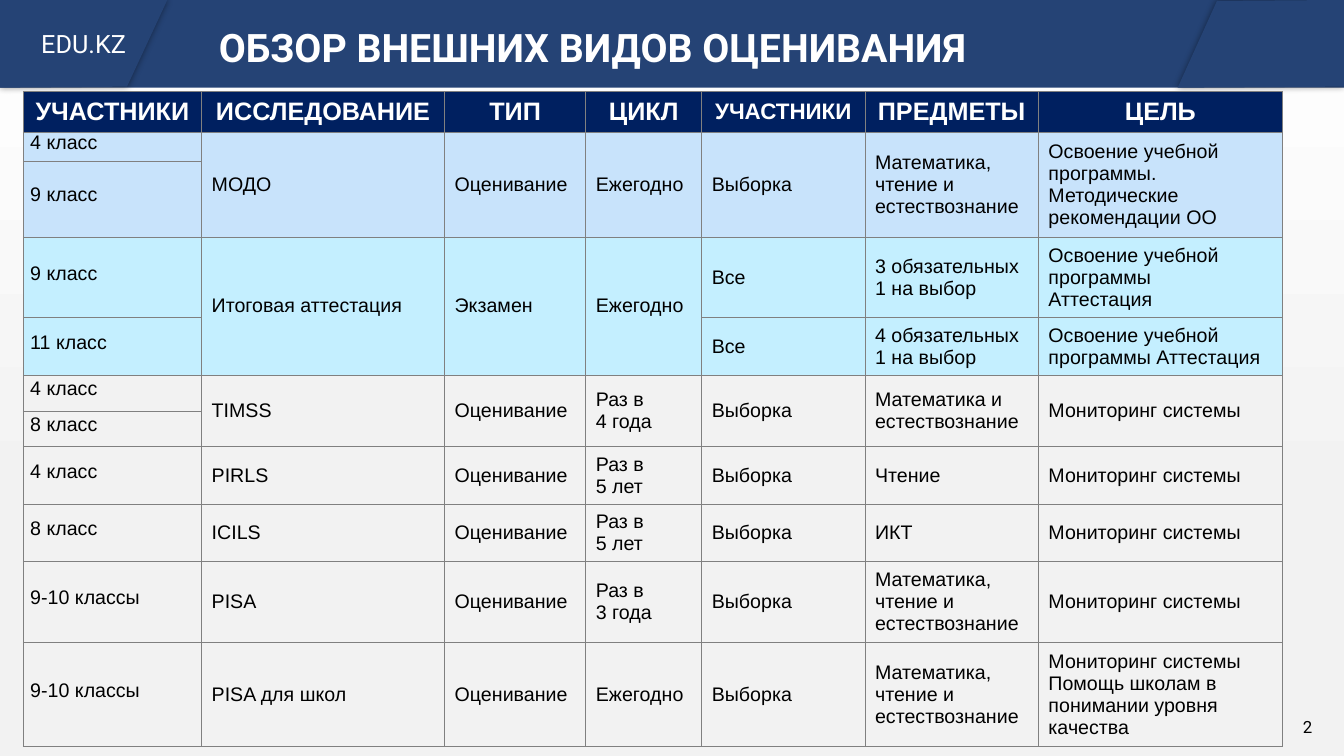
from lxml.etree import SubElement
from pptx import Presentation
from pptx.dml.color import RGBColor
from pptx.enum.shapes import MSO_SHAPE
from pptx.enum.text import MSO_ANCHOR, MSO_AUTO_SIZE, PP_ALIGN
from pptx.oxml import parse_xml
from pptx.oxml.ns import nsdecls, qn
from pptx.util import Inches, Pt

# Content
TITLE = "ОБЗОР ВНЕШНИХ ВИДОВ ОЦЕНИВАНИЯ"
SITE = "EDU.KZ"
PAGE = "2"
HEADS = ["УЧАСТНИКИ", "ИССЛЕДОВАНИЕ", "ТИП", "ЦИКЛ", "УЧАСТНИКИ", "ПРЕДМЕТЫ", "ЦЕЛЬ"]
TEST, YEARLY, SAMPLE = "Оценивание", "Ежегодно", "Выборка"
TRIO = "Математика, чтение и естествознание"
WATCH = "Мониторинг системы"
UP = None  # cell joined to the one above

BLUE, CYAN, GRAY = "C8E3FB", "C4EFFF", "F2F2F2"
NAVY, BAND, WHITE, BLACK, RULE = "002060", "254375", "FFFFFF", "000000", "808080"

# Row height, fill, cells
ROWS = [
    (0.39, NAVY, HEADS),
    (0.29, BLUE, ["4 класс", "МОДО", TEST, YEARLY, SAMPLE, TRIO,
                  "Освоение учебной программы. Методические рекомендации ОО"]),
    (0.75, BLUE, ["9 класс"] + [UP] * 6),
    (0.8, CYAN, ["9 класс", "Итоговая аттестация", "Экзамен", YEARLY, "Все",
                 "3 обязательных\n1 на выбор", "Освоение учебной программы\nАттестация"]),
    (0.57, CYAN, ["11 класс", UP, UP, UP, "Все",
                  "4 обязательных\n1 на выбор", "Освоение учебной программы Аттестация"]),
    (0.36, GRAY, ["4 класс", "TIMSS", TEST, "Раз в\n4 года", SAMPLE,
                  "Математика и\nестествознание", WATCH]),
    (0.35, GRAY, ["8 класс"] + [UP] * 6),
    (0.57, GRAY, ["4 класс", "PIRLS", TEST, "Раз в\n5 лет", SAMPLE, "Чтение", WATCH]),
    (0.57, GRAY, ["8 класс", "ICILS", TEST, "Раз в\n5 лет", SAMPLE, "ИКТ", WATCH]),
    (0.8, GRAY, ["9-10 классы", "PISA", TEST, "Раз в\n3 года", SAMPLE, TRIO, WATCH]),
    (1.03, GRAY, ["9-10 классы", "PISA для школ", TEST, YEARLY, SAMPLE, TRIO,
                  WATCH + "\nПомощь школам в понимании уровня качества"]),
]
COLS = [1.77, 2.41, 1.4, 1.15, 1.62, 1.72, 2.42]
LEFT = [(0, 0), (0, 0.87), (1.26, 0.86), (1.66, 0)]
RIGHT = [(13.33, 0.86), (13.33, 0), (12.07, 0.01), (11.68, 0.87)]


def color(code):
    return RGBColor.from_string(code)


def write(frame, text, size=14, font="Arial", ink=BLACK, bold=False,
          align=PP_ALIGN.LEFT, line=None, before=None, after=None):
    frame.text = text
    frame.word_wrap = True
    for para in frame.paragraphs:
        para.alignment = align
        para.line_spacing = line
        para.space_before = before
        para.space_after = after
        for run in para.runs:
            run.font.size = Pt(size)
            run.font.name = font
            run.font.bold = bold
            run.font.color.rgb = color(ink)


def paint(shape, code):
    shape.shadow.inherit = False
    shape.fill.solid()
    shape.fill.fore_color.rgb = color(code)
    shape.line.fill.background()


def corner(shapes, points):
    spots = [(Inches(x), Inches(y)) for x, y in points]
    form = shapes.build_freeform(*spots[0], scale=1.0)
    form.add_line_segments(spots[1:], close=True)
    shape = form.convert_to_shape()
    paint(shape, BAND)
    glow = shape.element.spPr.find(qn("a:effectLst"))
    shade = SubElement(glow, qn("a:outerShdw"), blurRad=str(Pt(5)), dist="0", dir="0")
    tone = SubElement(shade, qn("a:srgbClr"), val=BLACK)
    SubElement(tone, qn("a:alpha"), val="40000")
    return shape


def border(cell):
    props = cell._tc.get_or_add_tcPr()
    for spot, side in enumerate(("lnL", "lnR", "lnT", "lnB")):
        props.insert(spot, parse_xml(
            f'<a:{side} {nsdecls("a")} w="{Pt(0.5)}"><a:solidFill>'
            f'<a:srgbClr val="{RULE}"/></a:solidFill></a:{side}>'))


def main():
    deck = Presentation()
    deck.slide_width, deck.slide_height = Inches(13.33), Inches(7.5)
    slide = deck.slides.add_slide(deck.slide_layouts[5])
    shapes = slide.shapes

    # Background
    back = slide.background.fill
    back.gradient()
    back.gradient_angle = 270
    for stop, (place, code) in zip(back.gradient_stops, [(0, WHITE), (0.68, GRAY)]):
        stop.position = place
        stop.color.rgb = color(code)

    # Header band
    band = shapes.add_shape(MSO_SHAPE.RECTANGLE, 0, 0, deck.slide_width, Inches(0.87))
    paint(band, BAND)
    site = corner(shapes, LEFT)
    site.text_frame.vertical_anchor = MSO_ANCHOR.MIDDLE
    write(site.text_frame, SITE, size=18, font="Roboto", ink=WHITE, align=PP_ALIGN.CENTER)
    corner(shapes, RIGHT)

    # Title, brought in front of the band
    title = shapes.title
    title.element.getparent().append(title.element)
    title.left, title.top = Inches(2.07), Inches(0.15)
    title.width, title.height = Inches(9.6), Inches(0.61)
    title.text_frame.auto_size = MSO_AUTO_SIZE.NONE
    title.text_frame.vertical_anchor = MSO_ANCHOR.TOP
    write(title.text_frame, TITLE, size=28, font="Roboto", ink=WHITE, bold=True,
          line=1.07, after=Pt(8))

    # Page number
    page = shapes.add_textbox(Inches(12.52), Inches(7.06), Inches(0.9), Inches(0.3))
    write(page.text_frame, PAGE, size=12, font="Roboto", align=PP_ALIGN.CENTER)

    # Table
    tall = sum(row[0] for row in ROWS)
    grid = shapes.add_table(len(ROWS), len(COLS), Inches(0.23), Inches(0.91),
                            Inches(sum(COLS)), Inches(tall)).table
    grid.horz_banding = False
    for col, width in zip(grid.columns, COLS):
        col.width = Inches(width)
    for r, (height, fill, texts) in enumerate(ROWS):
        grid.rows[r].height = Inches(height)
        for c, text in enumerate(texts):
            cell = grid.cell(r, c)
            cell.fill.solid()
            cell.fill.fore_color.rgb = color(fill)
            border(cell)
            if text is UP:
                grid.cell(r - 1, c).merge(cell)
                continue
            cell.vertical_anchor = MSO_ANCHOR.MIDDLE
            if r == 0:
                write(cell.text_frame, text, size=16 if c == 4 else 18, ink=WHITE,
                      bold=True, align=PP_ALIGN.CENTER)
            elif c == 0:
                cell.margin_left = cell.margin_right = Inches(0.07)
                cell.margin_top = cell.margin_bottom = 0
                write(cell.text_frame, text, line=Pt(10), after=Pt(1))
            else:
                write(cell.text_frame, text)

    deck.save("out.pptx")


if __name__ == "__main__":
    main()
